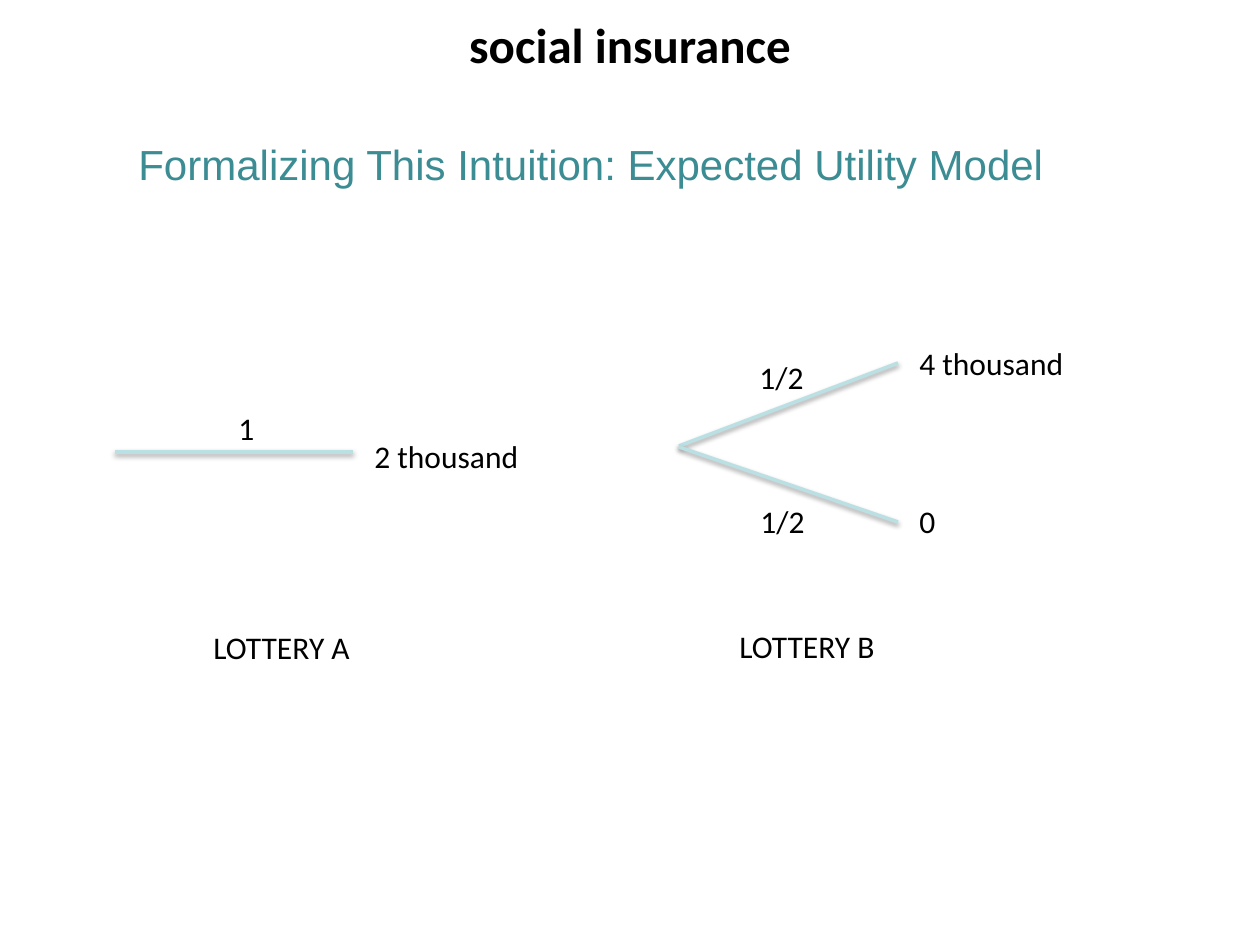
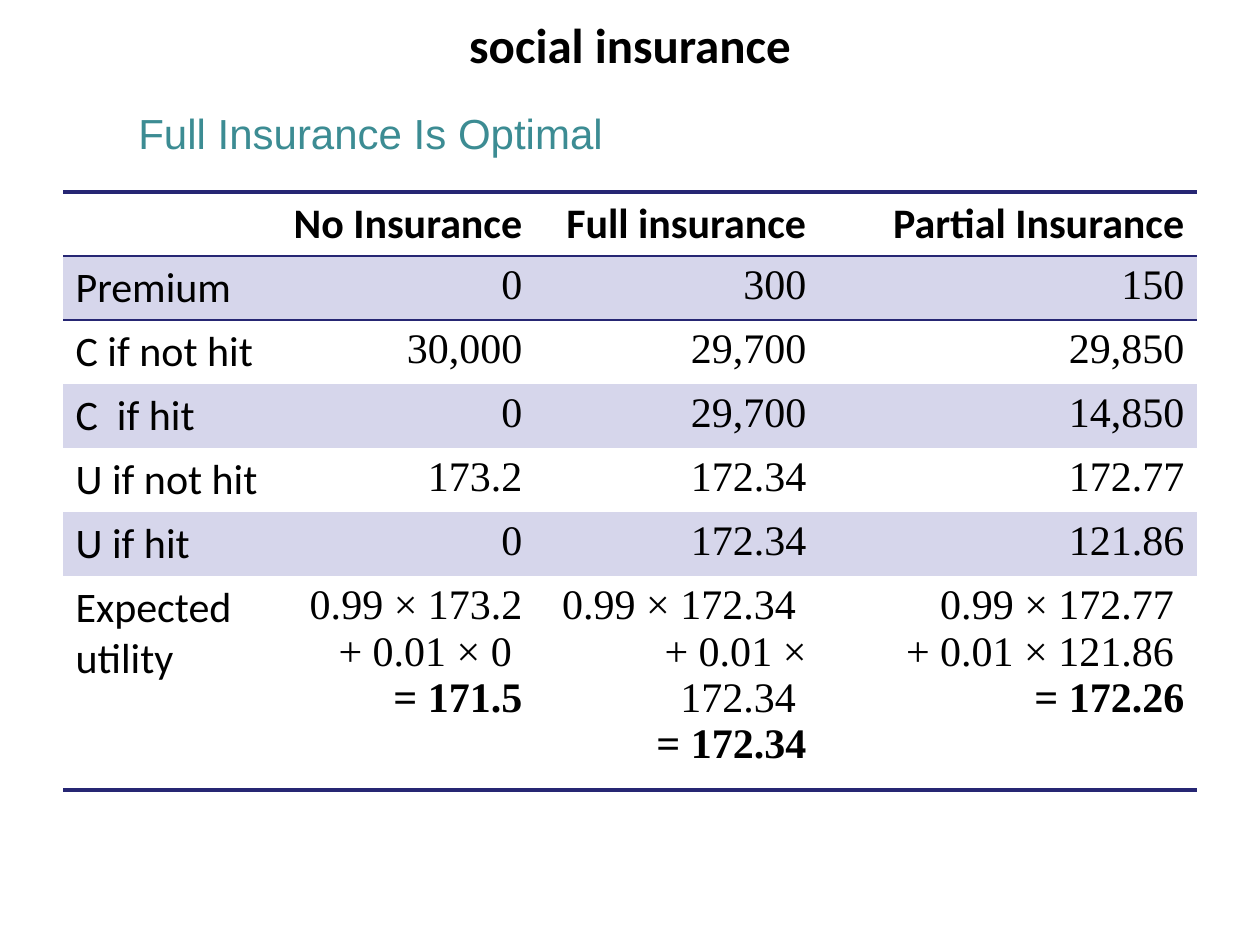
"""Build two slides on social insurance: a pair of lotteries and a table of insurance choices."""
from lxml.etree import SubElement
from pptx import Presentation
from pptx.dml.color import RGBColor
from pptx.enum.shapes import MSO_CONNECTOR
from pptx.enum.text import PP_ALIGN
from pptx.oxml import parse_xml
from pptx.oxml.ns import nsdecls, qn
from pptx.util import Emu, Pt

BLACK, TEAL, PALE_TEAL, NAVY, LILAC = "000000", "3C8C93", "BBE0E3", "262673", "D6D6EB"
BODY, HEADING, NUMBERS = "Calibri", "Arial", "Times New Roman"
PLAIN_TABLE = "{2D5ABB26-0587-4C30-8999-92F81FD0307C}"

DECK_TITLE = "social insurance"
LOTTERY_HEADING = ("Formalizing This Intuition: Expected Utility Model", 132)
INSURANCE_HEADING = ("Full Insurance Is Optimal", 101)

LABELS = [
    ("2 thousand", 362, 431, 171),
    ("1", 226, 403, 42),
    ("4 thousand", 907, 338, 171),
    ("0", 907, 496, 42),
    ("1/2", 747, 352, 71),
    ("1/2", 748, 496, 71),
    ("LOTTERY A", 201, 622, 280),
    ("LOTTERY B", 727, 621, 280),
]
BRANCHES = [(115, 452, 353, 452), (679, 446, 898, 363), (679, 447, 898, 522)]

COLUMN_WIDTHS = [210, 262, 284, 378]
ROW_HEIGHT, LAST_ROW_HEIGHT = 64, 198
HEADER = ["", "No Insurance", "Full insurance", "Partial Insurance"]
OUTCOMES = [
    ("Premium", "0", "300", "150"),
    ("C if not hit", "30,000", "29,700", "29,850"),
    ("C  if hit", "0", "29,700", "14,850"),
    ("U if not hit", "173.2", "172.34", "172.77"),
    ("U if hit", "0", "172.34", "121.86"),
]
UTILITY_LABEL = "Expected utility"
UTILITY_SUMS = [
    [("0.99 × 173.2", 0), ("+ 0.01 × 0", 18), ("= 171.5", 0)],
    [("0.99 × 172.34", 12), ("+ 0.01 × 172.34", 12), ("= 172.34", 0)],
    [("0.99 × 172.77", 6), ("+ 0.01 × 121.86", 12), ("= 172.26", 0)],
]


def px(count):
    return Emu(round(count * 914400 / 126))


def color(code):
    return RGBColor.from_string(code)


def write(para, text, size=18, font=BODY, ink=BLACK, bold=False, align=PP_ALIGN.LEFT, gap=0, around=0):
    para.alignment = align
    para.space_before = para.space_after = Pt(around)
    for piece in [text, " "] if gap else [text]:
        span = para.add_run()
        span.text = piece
        span.font.size, span.font.name, span.font.bold = Pt(size), font, bold
        span.font.color.rgb = color(ink)
    if gap:
        space_width = size / 4
        span.font._element.set("spc", str(round((gap - space_width) * 100)))


def add_text(page, text, left, top, width, height, **style):
    frame = page.shapes.add_textbox(px(left), px(top), px(width), px(height)).text_frame
    frame.word_wrap = True
    write(frame.paragraphs[0], text, **style)


def add_page(deck, heading, top):
    page = deck.slides.add_slide(deck.slide_layouts[6])
    add_text(page, DECK_TITLE, 63, 8, 1134, 72, size=28, bold=True, align=PP_ALIGN.CENTER)
    add_text(page, heading, 126, top, 1008, 68, size=24, font=HEADING, ink=TEAL, around=2.4)
    return page


def add_branch(page, *ends):
    branch = page.shapes.add_connector(MSO_CONNECTOR.STRAIGHT, *map(px, ends))
    branch.line.color.rgb, branch.line.width = color(PALE_TEAL), Pt(2)
    branch._element.spPr.append(parse_xml(
        f'<a:effectLst {nsdecls("a")}><a:outerShdw blurRad="{Pt(3.1)}" dist="{Pt(1.6)}" '
        f'dir="5400000" rotWithShape="0"><a:srgbClr val="{BLACK}"><a:alpha val="38000"/>'
        '</a:srgbClr></a:outerShdw></a:effectLst>'))


def add_border(cell, side, width):
    border = SubElement(cell._tc.get_or_add_tcPr(), qn(f"a:ln{side}"), w=str(Pt(width)))
    fill = SubElement(border, qn("a:solidFill"))
    SubElement(fill, qn("a:srgbClr"), val=NAVY)


def style_cell(cell, row, last):
    if row == 0:
        add_border(cell, "T", 2.25)
    if row == 1:
        add_border(cell, "T", 1)
    if row == 0:
        add_border(cell, "B", 1)
    if row == last:
        add_border(cell, "B", 2.25)
    if row % 2:
        cell.fill.solid()
        cell.fill.fore_color.rgb = color(LILAC)
    else:
        cell.fill.background()


def fill_cell(cell, lines, row, column, last):
    frame = cell.text_frame
    for index, (text, gap) in enumerate(lines):
        para = frame.add_paragraph() if index else frame.paragraphs[0]
        write(para, text, size=24, gap=gap,
              font=NUMBERS if row and column else BODY,
              bold=row == 0 or text.startswith("="),
              align=PP_ALIGN.RIGHT if column else PP_ALIGN.LEFT)


def add_insurance_table(page):
    rows = [[[(text, 0)] for text in row] for row in [HEADER, *OUTCOMES]]
    rows.append([[(UTILITY_LABEL, 0)], *UTILITY_SUMS])
    last = len(rows) - 1
    heights = [ROW_HEIGHT] * last + [LAST_ROW_HEIGHT]
    frame = page.shapes.add_table(len(rows), len(HEADER), px(63), px(192),
                                  px(sum(COLUMN_WIDTHS)), px(sum(heights)))
    table = frame.table
    table.first_row = table.horz_banding = False
    table._tbl.tblPr.find(qn("a:tableStyleId")).text = PLAIN_TABLE
    for column, width in zip(table.columns, COLUMN_WIDTHS):
        column.width = px(width)
    for row, height in zip(table.rows, heights):
        row.height = px(height)
    for row, cells in enumerate(rows):
        for column, lines in enumerate(cells):
            cell = table.cell(row, column)
            style_cell(cell, row, last)
            fill_cell(cell, lines, row, column, last)


def main():
    deck = Presentation()
    deck.slide_width, deck.slide_height = px(1260), px(945)
    lottery_page = add_page(deck, *LOTTERY_HEADING)
    for branch in BRANCHES:
        add_branch(lottery_page, *branch)
    for text, left, top, width in LABELS:
        add_text(lottery_page, text, left, top, width, 50)
    add_insurance_table(add_page(deck, *INSURANCE_HEADING))
    deck.save("out.pptx")


if __name__ == "__main__":
    main()
